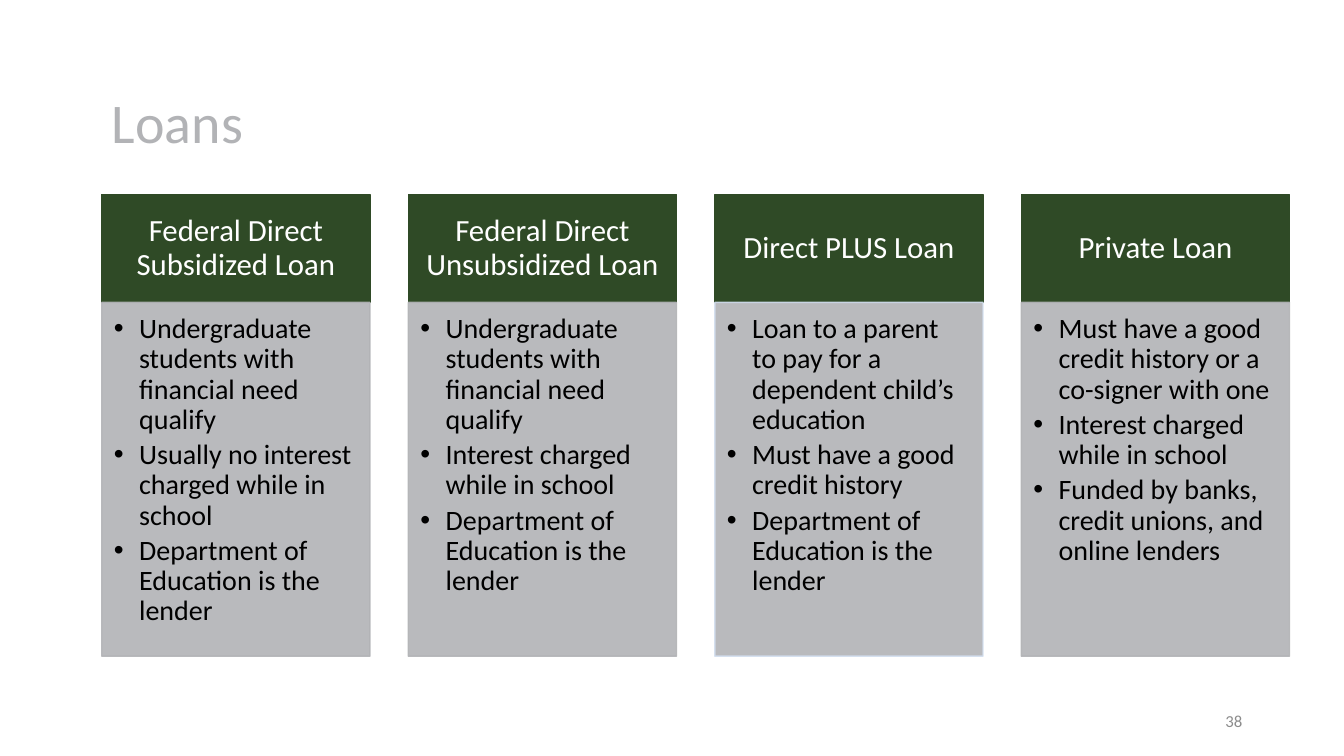
from dataclasses import dataclass

from lxml.etree import SubElement
from pptx import Presentation
from pptx.dml.color import RGBColor
from pptx.enum.shapes import MSO_SHAPE
from pptx.enum.text import MSO_ANCHOR as ANCHOR, MSO_AUTO_SIZE as FIT, PP_ALIGN as ALIGN
from pptx.oxml.ns import qn
from pptx.util import Inches, Pt

GREEN = RGBColor(0x2F, 0x4A, 0x26)
SILVER = RGBColor(0xB2, 0xB3, 0xB6)
PALE_BLUE = RGBColor(0xD2, 0xDE, 0xEF)
GREY = RGBColor(0x8C, 0x8C, 0x8C)
WHITE = RGBColor(0xFF, 0xFF, 0xFF)
BLACK = RGBColor(0, 0, 0)

LEFT, PITCH, COL_W = 1.01, 3.04, 2.66
HEAD_TOP, HEAD_H, LIST_H = 1.93, 1.07, 3.51
HEAD_INSETS = (0.17, 0.1, 0.17, 0.1)
LIST_INSETS = (0.12, 0.12, 0.16, 0.17)


@dataclass(frozen=True)
class Loan:
    """A loan type, its points and the outline of its list."""
    name: str
    points: tuple[str, ...]
    outline: RGBColor = SILVER


NEED = "Undergraduate students with financial need qualify"
INTEREST = "Interest charged while in school"
LENDER = "Department of Education is the lender"
LOANS = (
    Loan("Federal Direct Subsidized Loan",
         (NEED, "Usually no interest charged while in school", LENDER)),
    Loan("Federal Direct Unsubsidized Loan", (NEED, INTEREST, LENDER)),
    Loan("Direct PLUS Loan",
         ("Loan to a parent to pay for a dependent child’s education",
          "Must have a good credit history", LENDER), PALE_BLUE),
    Loan("Private Loan",
         ("Must have a good credit history or a co-signer with one", INTEREST,
          "Funded by banks, credit unions, and online lenders")),
)


def write(tf, text: str, *, size: float, color: RGBColor, align=ALIGN.LEFT,
          spacing: float = 0.9, after: float = 0, bullet: bool = False) -> None:
    """Add one formatted paragraph to a text frame."""
    p = tf.add_paragraph() if tf.text else tf.paragraphs[0]
    p.alignment, p.line_spacing, p.space_after = align, spacing, Pt(after)
    p.space_before = Pt(0)
    r = p.add_run()
    r.text = text
    r.font.name, r.font.size, r.font.color.rgb = "Calibri", Pt(size), color
    if bullet:
        pPr = p._p.get_or_add_pPr()
        pPr.set("marL", str(Inches(0.25)))
        pPr.set("indent", str(-Inches(0.25)))
        SubElement(pPr, qn("a:buFont"), typeface="Arial")
        SubElement(pPr, qn("a:buChar"), char="•")


def set_frame(tf, anchor, insets: tuple[float, ...] = (0.1, 0.05, 0.1, 0.05)) -> None:
    """Set wrapping, anchor and insets of a text frame."""
    tf.word_wrap, tf.auto_size, tf.vertical_anchor = True, FIT.NONE, anchor
    tf.margin_left, tf.margin_top, tf.margin_right, tf.margin_bottom = map(Inches, insets)


def add_panel(slide, col: int, top: float, height: float, fill: RGBColor,
              line: RGBColor, opacity: int = 100):
    """Draw a rectangle in a grid column and return it."""
    s = slide.shapes.add_shape(MSO_SHAPE.RECTANGLE, Inches(LEFT + col * PITCH),
                               Inches(top), Inches(COL_W), Inches(height))
    s.shadow.inherit = False
    s.fill.solid()
    s.fill.fore_color.rgb = fill
    s.line.color.rgb, s.line.width = line, Pt(1)
    if opacity < 100:
        for clr in s._element.spPr.iter(qn("a:srgbClr")):
            SubElement(clr, qn("a:alpha"), val=str(opacity * 1000))
    return s


def add_loan(slide, col: int, loan: Loan) -> None:
    """Draw one loan column: heading above list."""
    head = add_panel(slide, col, HEAD_TOP, HEAD_H, GREEN, GREEN)
    set_frame(head.text_frame, ANCHOR.MIDDLE, HEAD_INSETS)
    write(head.text_frame, loan.name, size=22, color=WHITE, align=ALIGN.CENTER)
    body = add_panel(slide, col, HEAD_TOP + HEAD_H, LIST_H, SILVER, loan.outline, 90)
    set_frame(body.text_frame, ANCHOR.TOP, LIST_INSETS)
    for point in loan.points:
        write(body.text_frame, point, size=20, color=BLACK, after=3.6, bullet=True)


def main() -> None:
    """Build and save the loans slide."""
    prs = Presentation()
    prs.slide_width, prs.slide_height = Inches(13.33), Inches(7.5)
    slide = prs.slides.add_slide(prs.slide_layouts[5])

    title = slide.shapes.title
    title.left, title.top = Inches(LEFT), Inches(0.74)
    title.width, title.height = Inches(11.41), Inches(1)
    set_frame(title.text_frame, ANCHOR.MIDDLE)
    write(title.text_frame, "Loans", size=40, color=SILVER)

    for col, loan in enumerate(LOANS):
        add_loan(slide, col, loan)

    number = slide.shapes.add_textbox(Inches(9.42), Inches(6.95), Inches(3), Inches(0.4))
    set_frame(number.text_frame, ANCHOR.MIDDLE)
    write(number.text_frame, "38", size=12, color=GREY, align=ALIGN.RIGHT, spacing=1.0)

    prs.save("out.pptx")


if __name__ == "__main__":
    main()
